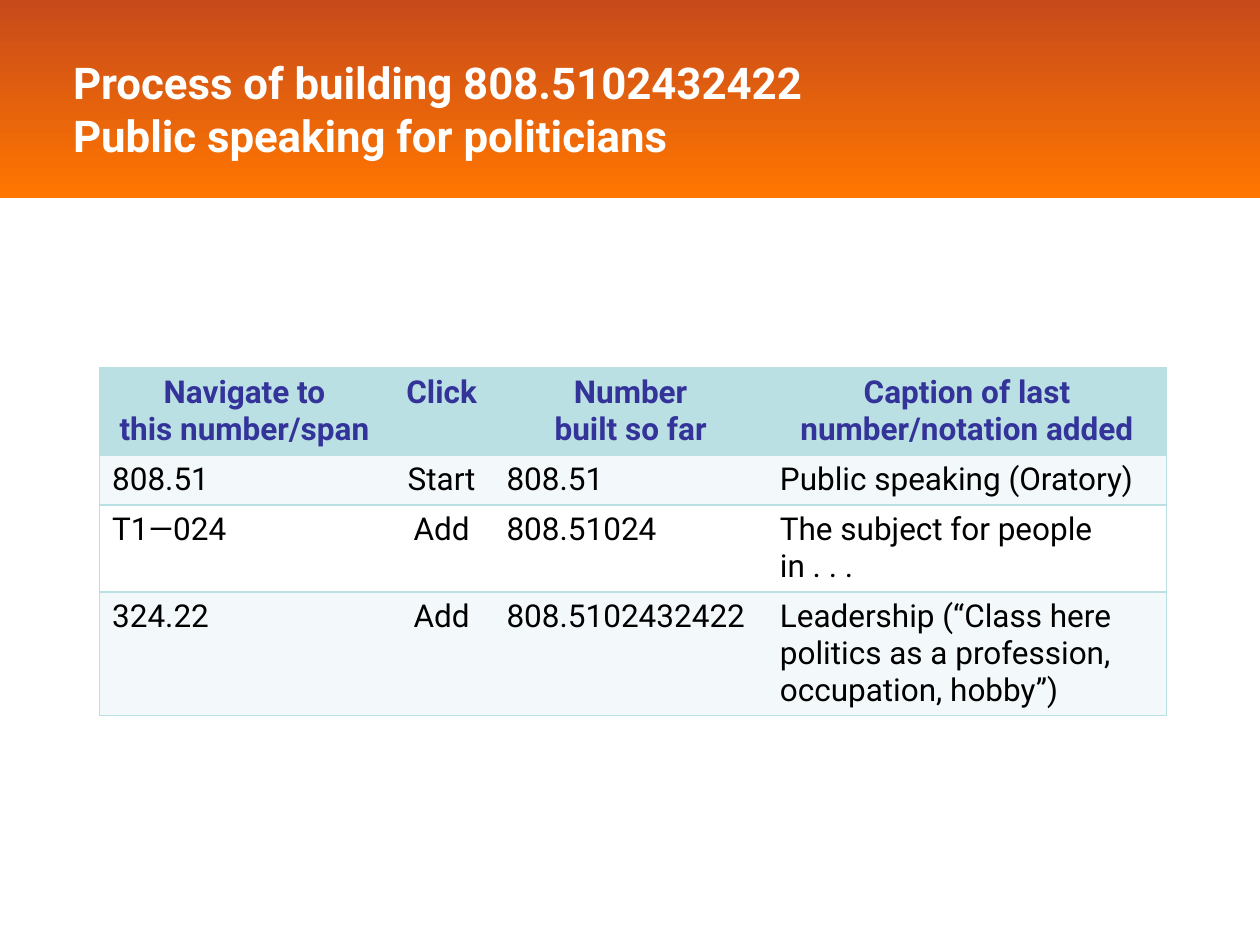
import lxml.etree
import pptx
import pptx.dml.color
import pptx.enum.shapes
import pptx.enum.text
import pptx.oxml
import pptx.oxml.ns
import pptx.util

COLORS = {
    "band_top": "C74A1B", "band_bottom": "FF7600", "white": "FFFFFF",
    "header": "BBE0E3", "stripe": "F3F9FA", "heading": "333399", "body": "000000",
}
FONT = "Roboto"
COL_WIDTHS = [2.3, 0.83, 2.17, 3.17]
ROW_HEIGHTS = [0.69, 0.4, 0.69, 0.98]
ROWS = [
    ["Navigate to\nthis number/span", "Click", "Number\nbuilt so far",
     "Caption of last number/notation added"],
    ["808.51", "Start", "808.51", "Public speaking (Oratory)"],
    ["T1—024", "Add", "808.51024", "The subject for people in . . ."],
    ["324.22", "Add", "808.5102432422",
     "Leadership (“Class here politics as a profession, occupation, hobby”)"],
]
ALIGN = pptx.enum.text.PP_ALIGN
Inches = pptx.util.Inches


def style(p, size, color, bold):
    p.font.name, p.font.size, p.font.bold = FONT, pptx.util.Pt(size), bold
    p.font.color.rgb = pptx.dml.color.RGBColor.from_string(COLORS[color])


def set_borders(cell, visible):
    """Draw the visible sides (letters of LRTB) and clear the others."""
    tcPr = cell._tc.get_or_add_tcPr()
    for i, side in enumerate("LRTB"):
        ln = lxml.etree.Element(pptx.oxml.ns.qn(f"a:ln{side}"), w="12700")
        if side in visible:
            fill = lxml.etree.SubElement(ln, pptx.oxml.ns.qn("a:solidFill"))
            lxml.etree.SubElement(fill, pptx.oxml.ns.qn("a:srgbClr"), val=COLORS["header"])
        else:
            lxml.etree.SubElement(ln, pptx.oxml.ns.qn("a:noFill"))
        tcPr.insert(i, ln)


prs = pptx.Presentation()
prs.slide_width, prs.slide_height = Inches(10), Inches(7.5)
s = prs.slides.add_slide(prs.slide_layouts[5])

# Gradient band behind the title
band = s.shapes.add_shape(pptx.enum.shapes.MSO_SHAPE.RECTANGLE, 0, 0, prs.slide_width, Inches(1.57))
band.shadow.inherit = False
band.line.fill.background()
band.fill.gradient()
band.fill.gradient_angle = 270
for stop, name, position in zip(band.fill.gradient_stops, ["band_top", "band_bottom"], [0, 1]):
    stop.color.rgb = pptx.dml.color.RGBColor.from_string(COLORS[name])
    stop.position = position
s.shapes._spTree.insert(2, band._element)

title = s.shapes.title
title.left, title.top, title.width, title.height = map(Inches, [0.48, 0.16, 7.64, 1.4])
tf = title.text_frame
tf.text = "Process of building 808.5102432422\vPublic speaking for politicians"
tf.word_wrap = True
tf.auto_size = pptx.enum.text.MSO_AUTO_SIZE.NONE
tf.vertical_anchor = pptx.enum.text.MSO_ANCHOR.MIDDLE
p = tf.paragraphs[0]
p.alignment = ALIGN.LEFT
style(p, 25, "white", True)
for r in p.runs:
    r._r.get_or_add_rPr().append(pptx.oxml.parse_xml(
        f'<a:effectLst {pptx.oxml.ns.nsdecls("a")}><a:outerShdw dist="38100" dir="2700000">'
        f'<a:srgbClr val="{COLORS["band_top"]}"/></a:outerShdw></a:effectLst>'))

# Number-building steps
table = s.shapes.add_table(
    len(ROWS), len(COL_WIDTHS), Inches(0.79), Inches(2.92),
    Inches(sum(COL_WIDTHS)), Inches(sum(ROW_HEIGHTS))).table
for column, width in zip(table.columns, COL_WIDTHS):
    column.width = Inches(width)
for row, height in zip(table.rows, ROW_HEIGHTS):
    row.height = Inches(height)

for i, texts in enumerate(ROWS):
    fill = "header" if i == 0 else "stripe" if i % 2 else "white"
    for j, text in enumerate(texts):
        cell = table.cell(i, j)
        cell.text = text
        cell.fill.solid()
        cell.fill.fore_color.rgb = pptx.dml.color.RGBColor.from_string(COLORS[fill])
        set_borders(cell, "TB" + {0: "L", len(texts) - 1: "R"}.get(j, ""))
        for p in cell.text_frame.paragraphs:
            p.alignment = ALIGN.CENTER if i == 0 or j == 1 else ALIGN.LEFT
            style(p, 18, "heading" if i == 0 else "body", i == 0)

prs.save("out.pptx")
